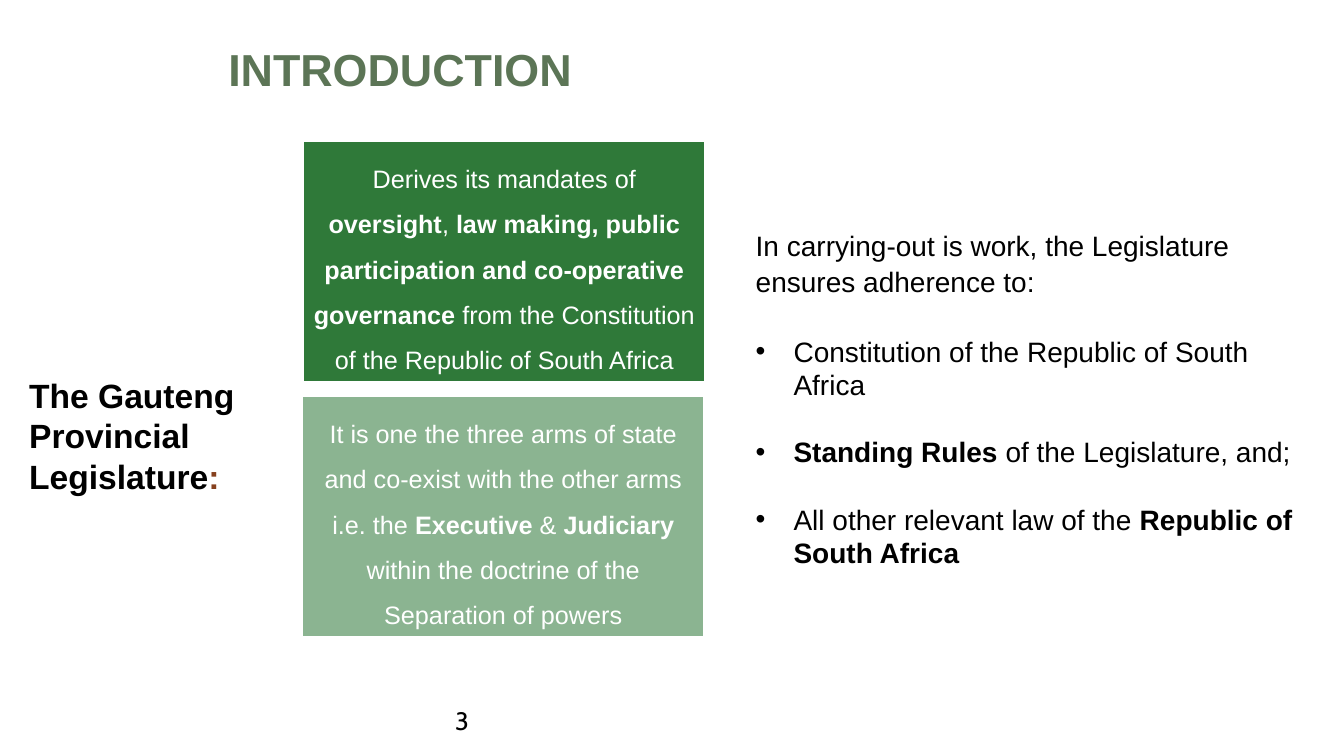
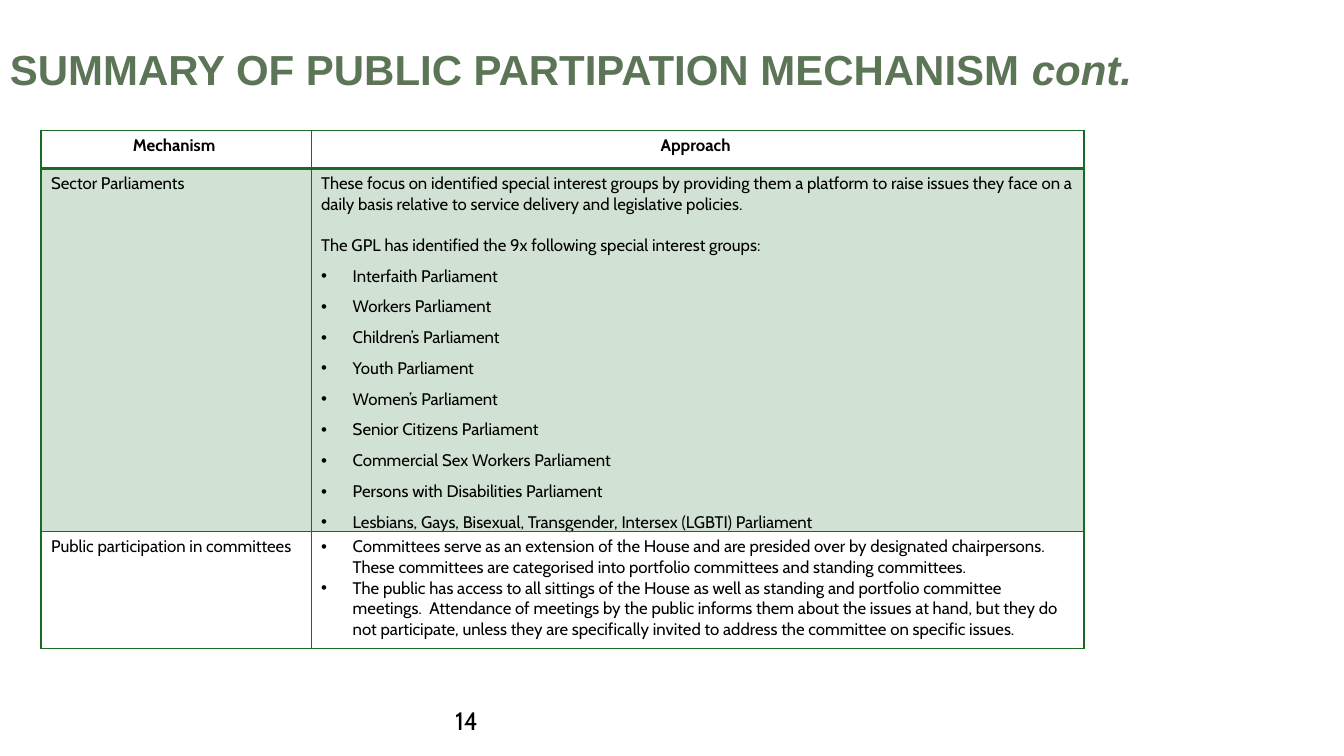
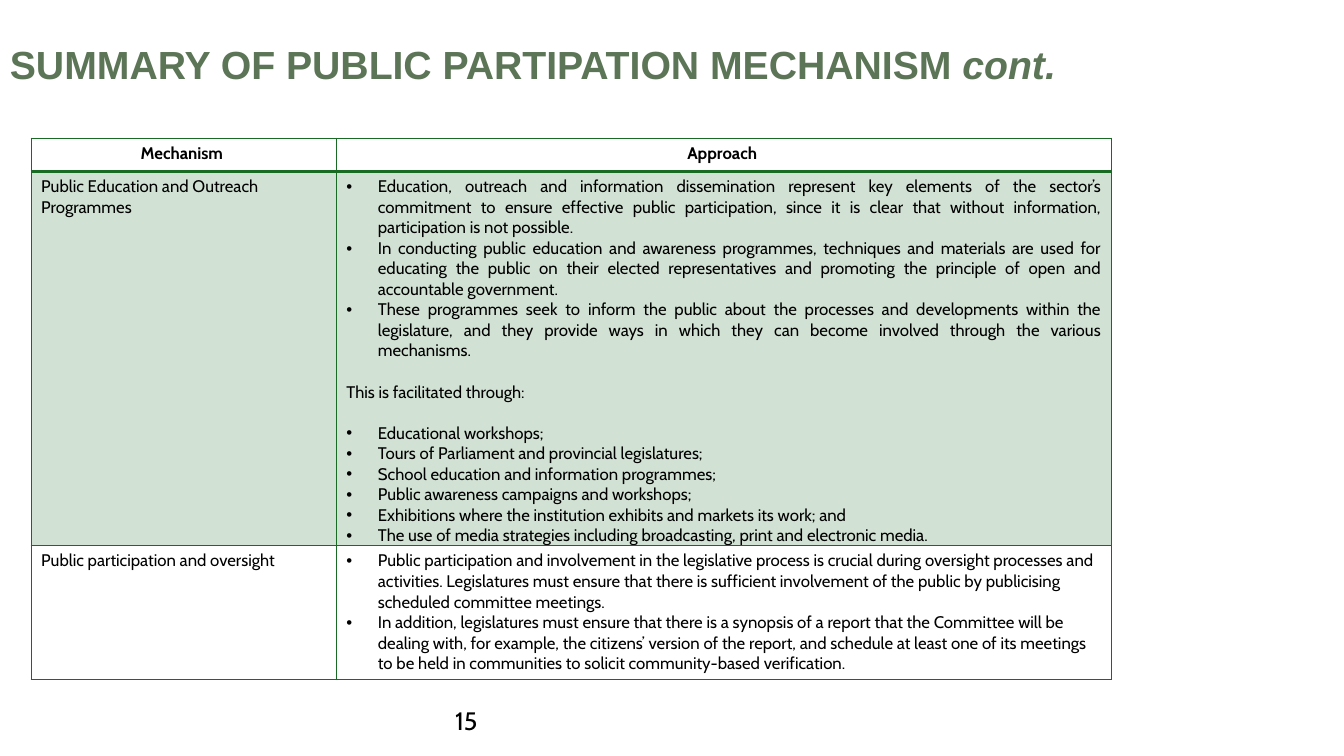
from lxml.etree import SubElement
from pptx import Presentation
from pptx.dml.color import RGBColor
from pptx.enum.shapes import MSO_SHAPE
from pptx.enum.text import MSO_ANCHOR, PP_ALIGN
from pptx.oxml.ns import qn
from pptx.util import Pt

GREEN, SAGE, RUST = "196B24", "5C7556", "86411E"
BLACK, WHITE = "000000", "FFFFFF"
CELL_LINE = 14.65


def paint(fill, color, alpha=100):
    """Fill with a hex colour at an opacity in percent."""
    fill.solid()
    fill.fore_color.rgb = RGBColor.from_string(color)
    if alpha < 100:
        clr = fill._xPr.find(qn("a:solidFill"))[0]
        SubElement(clr, qn("a:alpha"), val=str(alpha * 1000))


def write(tf, text, size=18, font="Arial", color=BLACK, bold=False, italic=False,
          align=None, spacing=None, before=None, indent=0):
    """Add a paragraph made of a string or of (string, run format) pairs."""
    p = tf.paragraphs[0] if not tf.paragraphs[0].runs else tf.add_paragraph()
    if indent:
        pPr = p._p.get_or_add_pPr()
        pPr.set("marL", str(Pt(indent)))
        pPr.set("indent", str(-Pt(indent)))
        SubElement(pPr, qn("a:buFont"), typeface="Arial")
        SubElement(pPr, qn("a:buChar"), char="•")
    p.alignment = align
    p.line_spacing = spacing
    if before:
        p.space_before = Pt(before)
    base = {"color": color, "bold": bold, "italic": italic}
    for piece, extra in [(text, {})] if isinstance(text, str) else text:
        look = {**base, **extra}
        r = p.add_run()
        r.text = piece
        r.font.size, r.font.name = Pt(size), font
        r.font.bold, r.font.italic = look["bold"], look["italic"]
        r.font.color.rgb = RGBColor.from_string(look["color"])


def border(cell, side, width):
    """Draw one side of a table cell in green."""
    ln = SubElement(cell._tc.get_or_add_tcPr(), qn(f"a:ln{side}"), w=str(Pt(width)))
    SubElement(SubElement(ln, qn("a:solidFill")), qn("a:srgbClr"), val=GREEN)


class Deck:
    """Holds the presentation, its style and the current slide."""

    def __init__(self):
        """Start a widescreen presentation."""
        self.prs = Presentation()
        self.prs.slide_width, self.prs.slide_height = Pt(960), Pt(540)

    def slide(self, title, number, size, left=0, width=960, height=60.5):
        """Add a slide with its title and page number."""
        self.s = self.prs.slides.add_slide(self.prs.slide_layouts[6])
        tf = self.text(left, 21.5, width, height)
        tf.vertical_anchor = MSO_ANCHOR.MIDDLE
        write(tf, title, size=size, color=SAGE, bold=True, spacing=0.9)
        write(self.text(318, 500.5, 324, 29), number, font="Cabin")

    def text(self, x, y, w, h):
        """Add a wrapping text box and return its frame."""
        tf = self.s.shapes.add_textbox(Pt(x), Pt(y), Pt(w), Pt(h)).text_frame
        tf.word_wrap = True
        return tf

    def panel(self, x, y, w, h, alpha, text):
        """Add a green box with centred white text."""
        sp = self.s.shapes.add_shape(MSO_SHAPE.RECTANGLE, Pt(x), Pt(y), Pt(w), Pt(h))
        sp.shadow.inherit = False
        paint(sp.fill, GREEN, alpha)
        paint(sp.line.fill, WHITE)
        sp.line.width = Pt(1.5)
        tf = sp.text_frame
        tf.word_wrap = True
        tf.vertical_anchor = MSO_ANCHOR.MIDDLE
        tf.margin_left = tf.margin_right = tf.margin_top = tf.margin_bottom = Pt(5)
        write(tf, text, color=WHITE, align=PP_ALIGN.CENTER, spacing=1.5)

    def table(self, x, y, cols, heights, rows, anchor=MSO_ANCHOR.TOP):
        """Add a mechanism table with a header and a tinted first row."""
        header = [[(name, {"bold": True, "align": PP_ALIGN.CENTER})]
                  for name in ("Mechanism ", "Approach ")]
        rows = [header] + [[[(name, {})], approach] for name, approach in rows]
        tbl = self.s.shapes.add_table(len(rows), len(cols), Pt(x), Pt(y),
                                      Pt(sum(cols)), Pt(sum(heights))).table
        tbl.first_row = tbl.horz_banding = False
        for col, width in zip(tbl.columns, cols):
            col.width = Pt(width)
        for i, (row, height) in enumerate(zip(rows, heights)):
            tbl.rows[i].height = Pt(height)
            for j, paragraphs in enumerate(row):
                cell = tbl.cell(i, j)
                for side, width in zip("LRTB", (1, 1, 2 if i == 1 else 1, 2 if i == 0 else 1)):
                    border(cell, side, width)
                if i == 1:
                    paint(cell.fill, GREEN, 20)
                else:
                    cell.fill.background()
                if i and j:
                    cell.vertical_anchor = anchor
                for text, fmt in paragraphs:
                    write(cell.text_frame, text, size=12, font="Cabin", **fmt)


def bullets(*texts, first=None, **fmt):
    """Return bulleted cell paragraphs, with optional space before the first."""
    return [(t, {"indent": 22.5, "before": None if i else first, **fmt})
            for i, t in enumerate(texts)]


def main():
    """Build and save the three slides."""
    deck = Deck()
    bold = {"bold": True}
    summary = [("SUMMARY OF PUBLIC PARTIPATION MECHANISM ", {}), ("cont.", {"italic": True})]

    deck.slide("INTRODUCTION", "3", 32, left=156, width=648)
    write(deck.text(13.75, 264.25, 203, 116.5),
          [("The Gauteng Provincial Legislature", {}), (":", {"color": RUST})],
          size=24, bold=True)
    deck.panel(216.5, 100.75, 287.5, 172, 90, [
        ("Derives its mandates of ", {}), ("oversight", bold), (", ", {}),
        ("law making, public participation and co-operative governance ", bold),
        ("from the Constitution of the Republic of South Africa", {})])
    deck.panel(215.75, 283, 287.5, 172, 50, [
        ("It is one the three arms of state and co-exist with the other arms i.e. the ", {}),
        ("Executive ", bold), ("& ", {}), ("Judiciary ", bold),
        ("within the doctrine of the Separation of powers", {})])
    tf = deck.text(532.75, 157.75, 399, 255)
    write(tf, "In carrying-out is work, the Legislature ensures adherence to:",
          size=20, spacing=1.07)
    for before, item in [
            (26, "Constitution of the Republic of South Africa"),
            (24, [("Standing Rules ", bold), ("of the Legislature, and;", {})]),
            (24, [("All other relevant law of the ", {}),
                  ("Republic of South Africa", bold)])]:
        write(tf, item, size=20, indent=27, before=before)

    deck.slide(summary, "14", 30)
    deck.table(29.25, 93.25, (193, 552), (27, 248.5, 83.5), [
        ("Sector Parliaments", [
            ("These focus on identified special interest groups by providing them a platform "
             "to raise issues they face on a daily basis relative to service delivery and "
             "legislative policies.", {}),
            ("The GPL has identified the 9x following special interest groups:",
             {"before": CELL_LINE}),
            *bullets(
                "Interfaith Parliament", "Workers Parliament", "Children’s Parliament",
                "Youth Parliament", "Women’s Parliament", "Senior Citizens Parliament",
                "Commercial Sex Workers Parliament", "Persons with Disabilities Parliament",
                "Lesbians, Gays, Bisexual, Transgender, Intersex (LGBTI) Parliament ",
                align=PP_ALIGN.JUSTIFY, spacing=1.5)]),
        ("Public participation in committees", bullets(
            "Committees serve as an extension of the House and are presided over by "
            "designated chairpersons. These committees are categorised into portfolio "
            "committees and standing committees.",
            "The public has access to all sittings of the House as well as standing and "
            "portfolio committee meetings.  Attendance of meetings by the public informs "
            "them about the issues at hand, but they do not participate, unless they are "
            "specifically invited to address the committee on specific issues."))])

    deck.slide(summary, "15", 28, height=52.5)
    deck.table(22.25, 98.75, (218, 554), (23.75, 224, 95.75), [
        ("Public Education and Outreach Programmes", [
            *bullets(
                "Education, outreach and information dissemination represent key elements of "
                "the sector’s commitment to ensure effective public participation, since it "
                "is clear that without information, participation is not possible. ",
                "In conducting public education and awareness programmes, techniques and "
                "materials are used for educating the public on their elected representatives "
                "and promoting the principle of open and accountable government. ",
                "These programmes seek to inform the public about the processes and "
                "developments within the legislature, and they provide ways in which they "
                "can become involved through the various mechanisms. ",
                align=PP_ALIGN.JUSTIFY),
            ("This is facilitated through:", {"before": CELL_LINE}),
            *bullets(
                "Educational workshops;",
                "Tours of Parliament and provincial legislatures;",
                "School education and information programmes;",
                "Public awareness campaigns and workshops;",
                "Exhibitions where the institution exhibits and markets its work; and",
                "The use of media strategies including broadcasting, print and electronic media.",
                first=CELL_LINE)]),
        ("Public participation and oversight", bullets(
            "Public participation and involvement in the legislative process is crucial during "
            "oversight processes and activities. Legislatures must ensure that there is "
            "sufficient involvement of the public by publicising scheduled committee meetings.",
            "In addition, legislatures must ensure that there is a synopsis of a report that "
            "the Committee will be dealing with, for example, the citizens’ version of the "
            "report, and schedule at least one of its meetings to be held in communities to "
            "solicit community-based verification."))], anchor=MSO_ANCHOR.MIDDLE)

    deck.prs.save("out.pptx")


if __name__ == "__main__":
    main()
